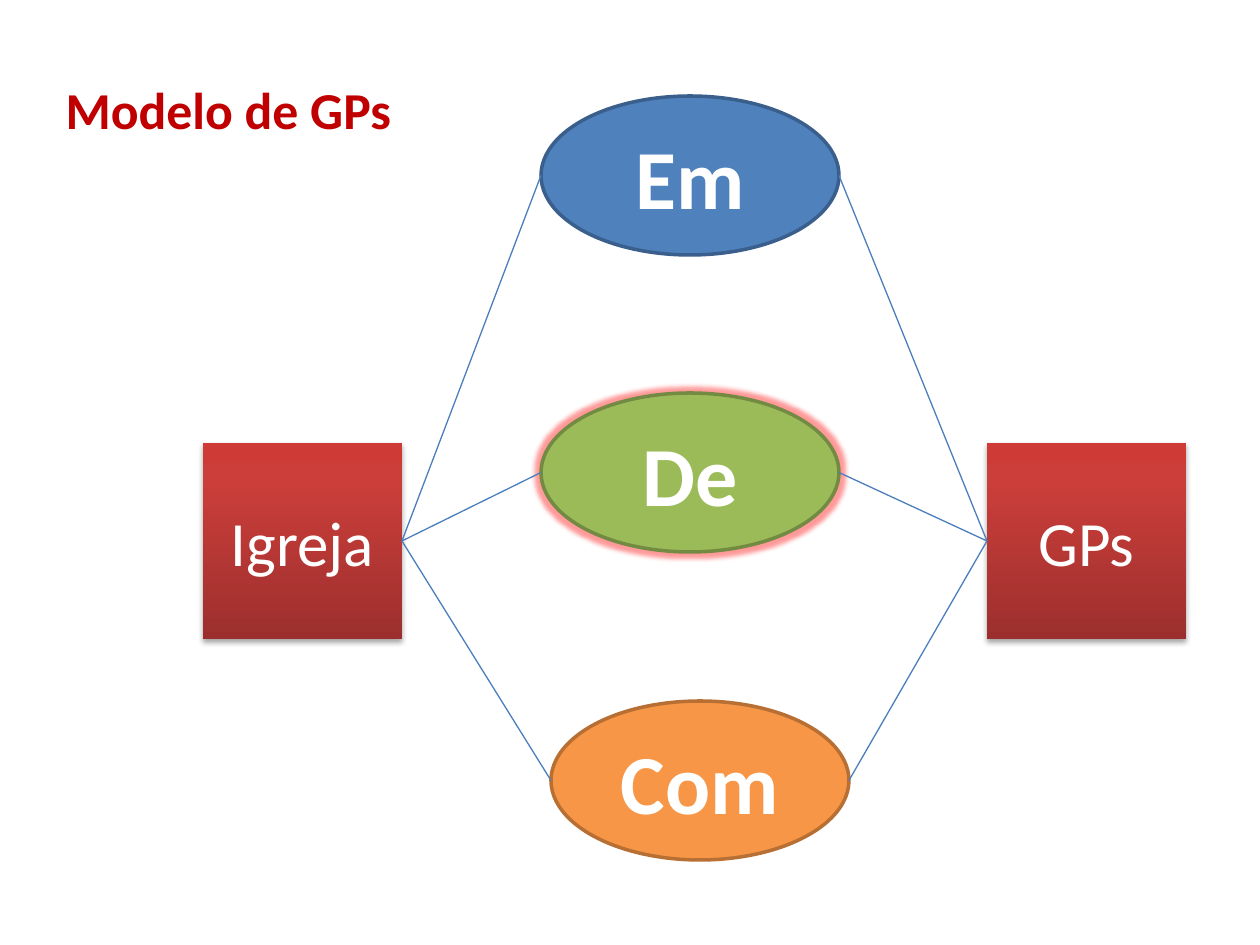
from dataclasses import dataclass

from lxml.etree import SubElement
from pptx import Presentation
from pptx.dml.color import RGBColor
from pptx.enum.shapes import MSO_CONNECTOR, MSO_SHAPE
from pptx.enum.text import MSO_ANCHOR, PP_ALIGN
from pptx.oxml.ns import qn
from pptx.util import Pt

PX = 914400 / 126
LEFT, RIGHT = 1, 3


@dataclass(frozen=True)
class Theme:
    font: str = "Calibri"
    title_color: str = "C00000"
    light: str = "FFFFFF"
    connector: str = "4B7EBC"
    glow: str = "FF0000"
    shadow: str = "000000"
    block_stops: tuple = ((0, "9C2F2D"), (80, "CB3E3A"), (100, "CE3B37"))
    title_size: float = 29.6
    block_size: int = 36
    oval_size: int = 48


THEME = Theme()


def px(*values):
    return [round(value * PX) for value in values]


def rgb(color):
    return RGBColor.from_string(color)


def add_text(shape, text, size, color, bold=False, anchor=MSO_ANCHOR.MIDDLE):
    frame = shape.text_frame
    frame.word_wrap = True
    frame.vertical_anchor = anchor
    para = frame.paragraphs[0]
    para.alignment = PP_ALIGN.CENTER
    span = para.add_run()
    span.text = text
    span.font.name = THEME.font
    span.font.size = Pt(size)
    span.font.bold = bold
    span.font.color.rgb = rgb(color)


def add_color(parent, color, alpha=None):
    element = SubElement(parent, qn("a:srgbClr"), val=color)
    if alpha is not None:
        SubElement(element, qn("a:alpha"), val=str(alpha * 1000))


def add_effect(shape, name, color, alpha, **attributes):
    effects = shape._element.spPr.find(qn("a:effectLst"))
    effect = SubElement(effects, qn(name), **attributes)
    add_color(effect, color, alpha)


def fill_gradient(shape, stops):
    """Run the stops, given as percent and colour, from bottom to top."""
    shape.fill.gradient()
    shape.fill.gradient_angle = 90
    stop_list = shape._element.spPr.find(qn("a:gradFill")).find(qn("a:gsLst"))
    for old_stop in list(stop_list):
        stop_list.remove(old_stop)
    for percent, color in stops:
        add_color(SubElement(stop_list, qn("a:gs"), pos=str(percent * 1000)), color)


def add_title(page, text):
    box = page.shapes.add_textbox(*px(44, 72, 369, 103))
    add_text(box, text, THEME.title_size, THEME.title_color, True, MSO_ANCHOR.TOP)


def add_block(page, text, left):
    block = page.shapes.add_shape(MSO_SHAPE.RECTANGLE, *px(left, 443, 199, 196))
    block.shadow.inherit = False
    fill_gradient(block, THEME.block_stops)
    block.line.fill.background()
    add_effect(block, "a:outerShdw", THEME.shadow, 35, blurRad=str(Pt(3.1)),
               dist=str(Pt(1.8)), dir="5400000", rotWithShape="0")
    add_text(block, text, THEME.block_size, THEME.light)
    return block


def add_oval(page, text, left, top, fill, outline, glowing):
    oval = page.shapes.add_shape(MSO_SHAPE.OVAL, *px(left, top, 298, 159))
    oval.shadow.inherit = False
    oval.fill.solid()
    oval.fill.fore_color.rgb = rgb(fill)
    oval.line.color.rgb = rgb(outline)
    oval.line.width = Pt(2)
    if glowing:
        add_effect(oval, "a:glow", THEME.glow, 40, rad=str(Pt(5)))
    add_text(oval, text, THEME.oval_size, THEME.light, bold=True)
    return oval


def add_link(page, block, side, oval):
    """Join one side of a block to the facing end of an oval."""
    end_x = oval.left if side == RIGHT else oval.left + oval.width
    end_y = oval.top + oval.height // 2
    link = page.shapes.add_connector(MSO_CONNECTOR.STRAIGHT, 0, 0, end_x, end_y)
    link.begin_connect(block, side)
    link.line.color.rgb = rgb(THEME.connector)
    link.line.width = Pt(0.75)
    SubElement(link._element.spPr, qn("a:effectLst"))


def main():
    deck = Presentation()
    deck.slide_width, deck.slide_height = px(1260, 945)
    page = deck.slides.add_slide(deck.slide_layouts[6])

    add_title(page, "Modelo de GPs")
    church = add_block(page, "Igreja", 203)
    ovals = [
        add_oval(page, *content)
        for content in (
            ("Em", 541, 96, "4F81BD", "3A5F8C", False),
            ("De", 541, 393, "9BBB59", "738A42", True),
            ("Com", 551, 701, "F79646", "B76F34", False),
        )
    ]
    groups = add_block(page, "GPs", 987)
    for block, side in ((church, RIGHT), (groups, LEFT)):
        for oval in ovals:
            add_link(page, block, side, oval)

    deck.save("out.pptx")


if __name__ == "__main__":
    main()
